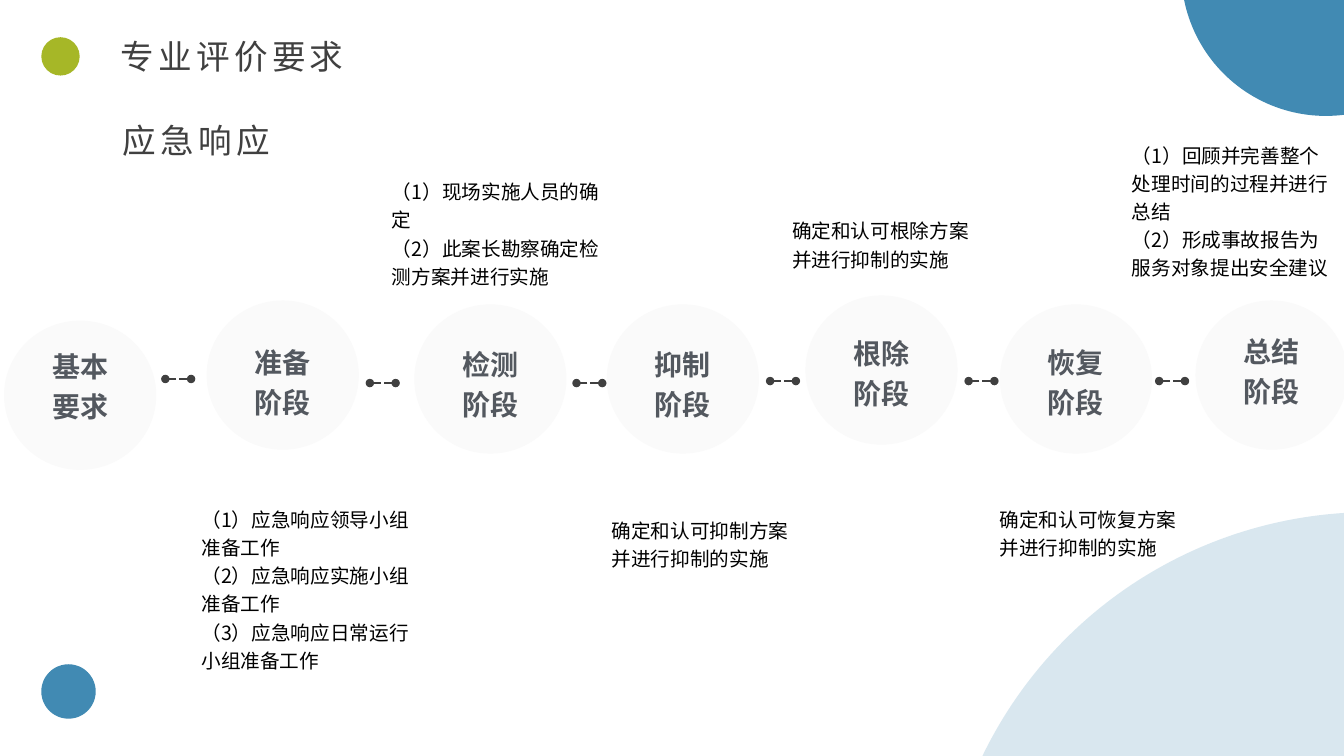
"""Build the emergency response slide with its seven linked stages."""
from lxml import etree
from pptx import Presentation
from pptx.dml.color import RGBColor
from pptx.enum import dml, lang, shapes, text
from pptx.oxml import ns
from pptx.util import Pt

FONT = "Noto Sans CJK SC"
BLUE = RGBColor(0x41, 0x8A, 0xB3)
GREEN = RGBColor(0xA6, 0xB7, 0x27)
PALE = RGBColor(0xFA, 0xFA, 0xFA)
DARK = RGBColor(0x40, 0x40, 0x40)
SLATE = RGBColor(0x53, 0x58, 0x5F)
BLACK = RGBColor(0x00, 0x00, 0x00)
CIRCLE_WIDTH, CIRCLE_HEIGHT = 108.7, 106.6
LABEL_WIDTH, LABEL_HEIGHT = 57.6, 61.9
LINK_WIDTH = 18.4

presentation = Presentation()
presentation.slide_width, presentation.slide_height = Pt(960), Pt(540)
slide = presentation.slides.add_slide(presentation.slide_layouts[5])


def write(content, box, shape=None, size=14, color=BLACK, bold=False, align=text.PP_ALIGN.LEFT,
          anchor=text.MSO_ANCHOR.TOP, spacing=1.2, tracking=0, insets=(7.2, 3.6)):
    box = [Pt(length) for length in box]
    shape = shape or slide.shapes.add_textbox(*box)
    shape.left, shape.top, shape.width, shape.height = box
    frame = shape.text_frame
    frame.text = content
    frame.word_wrap = True
    frame.auto_size = text.MSO_AUTO_SIZE.SHAPE_TO_FIT_TEXT
    frame.vertical_anchor = anchor
    frame.margin_left = frame.margin_right = Pt(insets[0])
    frame.margin_top = frame.margin_bottom = Pt(insets[1])
    for paragraph in frame.paragraphs:
        paragraph.alignment = align
        paragraph.line_spacing = spacing
        font = paragraph.runs[0].font
        font.size, font.bold, font.name = Pt(size), bold, FONT
        font.color.rgb = color
        font.language_id = lang.MSO_LANGUAGE_ID.SIMPLIFIED_CHINESE
        properties = paragraph.runs[0]._r.get_or_add_rPr()
        properties.set("spc", str(tracking * 100))
        etree.SubElement(properties, ns.qn("a:ea"), typeface=FONT)


def add_circle(kind, left, top, width, height, color):
    shape = slide.shapes.add_shape(kind, Pt(left), Pt(top), Pt(width), Pt(height))
    shape.shadow.inherit = False
    shape.fill.solid()
    shape.fill.fore_color.rgb = color
    shape.line.fill.background()
    return shape


decorations = [
    (671, 365.8, 617, BLUE, 20),
    (843.8, -123.8, 206.6, BLUE, 100),
    (29.5, 474.5, 38.9, BLUE, 100),
    (29.5, 26.6, 27.4, GREEN, 100),
]
for left, top, diameter, color, opacity in decorations:
    circle = add_circle(shapes.MSO_SHAPE.FLOWCHART_CONNECTOR, left, top, diameter, diameter, color)
    if opacity < 100:
        tint = circle._element.spPr.find(".//" + ns.qn("a:srgbClr"))
        etree.SubElement(tint, ns.qn("a:alpha"), val=str(opacity * 1000))

headings = [
    ("专业评价要求", (79.2, 22.3, 184.3, 36), slide.shapes.title),
    ("应急响应", (80.6, 82.1, 184.3, 36), None),
]
for content, box, shape in headings:
    write(content, box, shape, size=24, color=DARK, align=text.PP_ALIGN.JUSTIFY,
          spacing=1.0, tracking=3)

stages = [
    ("基本\n要求", 2.9, 229, 242.6),
    ("准备阶段", 147.6, 214.6, 239.8),
    ("检测阶段", 295.9, 217.4, 241.2),
    ("抑制阶段", 433.4, 217.4, 241.2),
    ("根除阶段", 575.3, 211, 233.3),
    ("恢复阶段", 714.2, 217.4, 239.8),
    ("总结阶段", 853.9, 214.6, 231.8),
]
for label, left, top, label_top in stages:
    add_circle(shapes.MSO_SHAPE.OVAL, left, top, CIRCLE_WIDTH, CIRCLE_HEIGHT, PALE)
    label_left = left + (CIRCLE_WIDTH - LABEL_WIDTH) / 2
    write(label, (label_left, label_top, LABEL_WIDTH, LABEL_HEIGHT), size=20, color=SLATE,
          bold=True, align=text.PP_ALIGN.CENTER, anchor=text.MSO_ANCHOR.MIDDLE, insets=(2.2, 2.2))

links = [(118.1, 270.7), (264.2, 273.6), (411.8, 273.6),
         (550.1, 272.2), (691.9, 272.2), (828, 272.2)]
for left, top in links:
    link = slide.shapes.add_connector(shapes.MSO_CONNECTOR.STRAIGHT, Pt(left + LINK_WIDTH), Pt(top),
                                      Pt(left), Pt(top))
    link.line.color.rgb = DARK
    link.line.width = Pt(2)
    link.line.dash_style = dml.MSO_LINE.SQUARE_DOT
    for end in ("a:headEnd", "a:tailEnd"):
        etree.SubElement(link.line._get_or_add_ln(), ns.qn(end), type="oval")
    etree.SubElement(link._element.spPr, ns.qn("a:effectLst"))

notes = [
    ("（1）应急响应领导小组准备工作\n（2）应急响应实施小组准备工作\n（3）应急响应日常运行小组准备工作",
     (136.8, 355.7, 175.7, 121), 1.2),
    ("（1）现场实施人员的确定\n（2）此案长勘察确定检测方案并进行实施", (272.9, 121.7, 167, 83.5), 1.2),
    ("确定和认可抑制方案并进行抑制的实施", (429.8, 363.6, 141.1, 46), 1.2),
    ("确定和认可根除方案并进行抑制的实施", (558.7, 149.8, 141.1, 46), 1.2),
    ("确定和认可恢复方案并进行抑制的实施", (707, 355.7, 141.1, 46), 1.2),
    ("（1）回顾并完善整个处理时间的过程并进行总结\n（2）形成事故报告为服务对象提出安全建议",
     (801.4, 95.8, 160.6, 108), Pt(20)),
]
for content, box, spacing in notes:
    write(content, box, spacing=spacing)

presentation.save("out.pptx")
